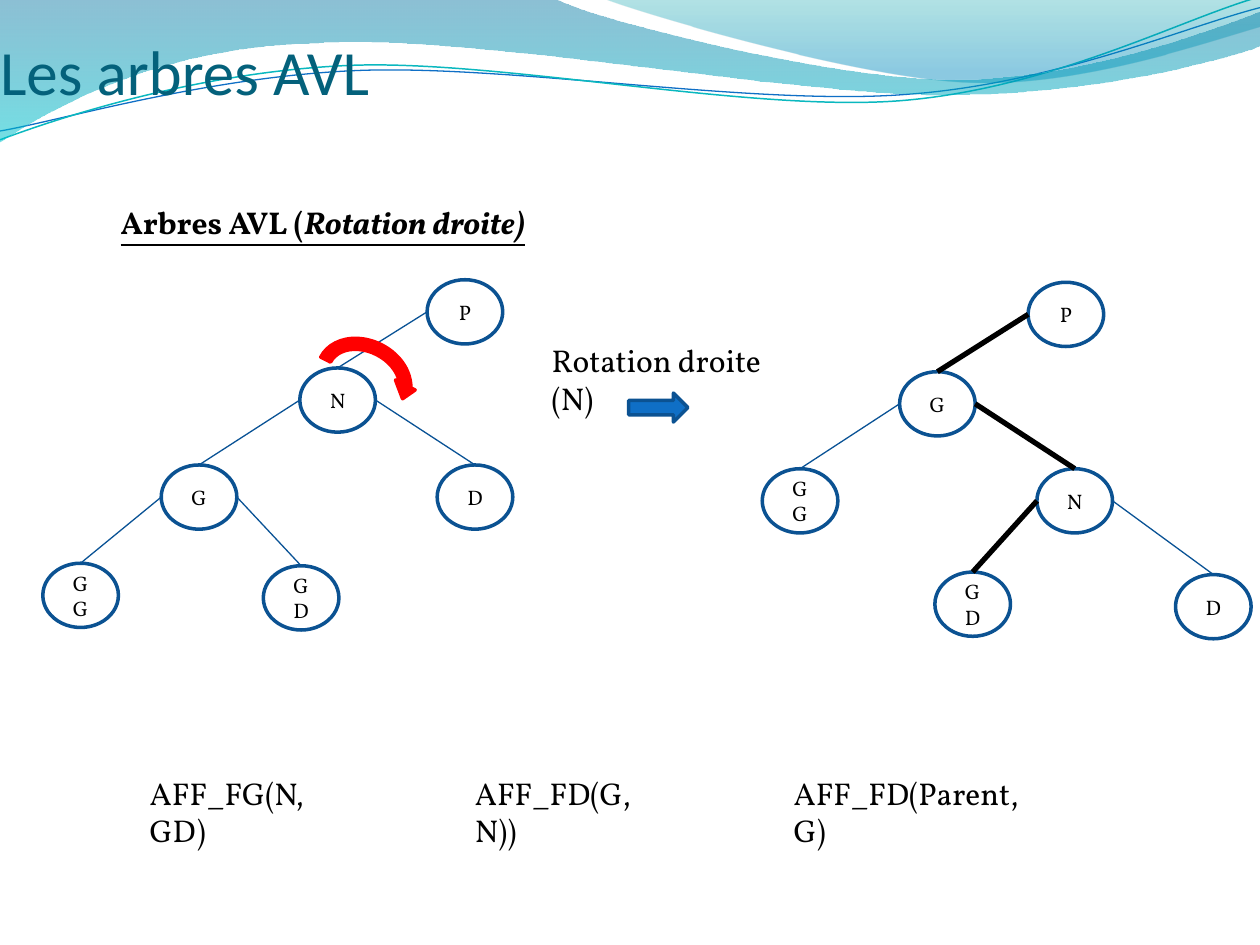
from dataclasses import dataclass
from math import cos, radians, sin

from lxml import etree
from pptx import Presentation
from pptx.dml.color import RGBColor
from pptx.enum.shapes import MSO_CONNECTOR, MSO_SHAPE
from pptx.enum.text import MSO_ANCHOR, PP_ALIGN
from pptx.oxml.ns import qn
from pptx.util import Inches, Pt

STRAIGHT = MSO_CONNECTOR.STRAIGHT
OVAL = MSO_SHAPE.OVAL
CIRCULAR_ARROW = MSO_SHAPE.CIRCULAR_ARROW
RIGHT_ARROW = MSO_SHAPE.RIGHT_ARROW
MIDDLE, BOTTOM = MSO_ANCHOR.MIDDLE, MSO_ANCHOR.BOTTOM
LEFT, CENTER = PP_ALIGN.LEFT, PP_ALIGN.CENTER

Point = tuple[float, float]
Segment = tuple[Point, ...]


@dataclass(frozen=True)
class Theme:
    title_font: str = "Calibri"
    text_font: str = "Vollkorn"
    title_size: int = 36
    text_size: int = 18
    node_size: int = 12
    title: str = "04617B"
    black: str = "000000"
    white: str = "FFFFFF"
    outline: str = "0B5292"
    edge: str = "095295"
    blue: str = "0F6FC6"
    teal: str = "0AB8BF"
    red: str = "FF0000"


@dataclass(frozen=True)
class Stop:
    position: float
    color: str
    opacity: int


@dataclass(frozen=True)
class Node:
    label: str
    left: float
    top: float


@dataclass(frozen=True)
class Edge:
    parent: str
    child: str
    from_right: bool = False
    moved: bool = False


@dataclass(frozen=True)
class Caption:
    text: str
    left: float
    top: float
    width: float


THEME = Theme()
NODE_WIDTH, NODE_HEIGHT = 0.6, 0.51
UNITS = 1000
RIPPLE_TILT = -2.7
RIPPLE_CENTER = (4.99, 0.58)

TREES = [
    (
        [Node("P", 3.39, 2.22), Node("N", 2.38, 2.92), Node("G", 1.28, 3.69),
         Node("D", 3.47, 3.69), Node("GG", 0.34, 4.47), Node("GD", 2.09, 4.49)],
        [Edge("P", "N"), Edge("N", "G"), Edge("N", "D", True),
         Edge("G", "GG"), Edge("G", "GD", True)],
    ),
    (
        [Node("P", 8.16, 2.24), Node("G", 7.14, 2.95), Node("GG", 6.05, 3.72),
         Node("N", 8.23, 3.72), Node("GD", 7.42, 4.54), Node("D", 9.33, 4.56)],
        [Edge("P", "G", moved=True), Edge("G", "GG"), Edge("G", "N", True, True),
         Edge("N", "GD", moved=True), Edge("N", "D", True)],
    ),
]

CAPTIONS = [
    Caption("AFF_FG(N, GD)", 1.09, 6.09, 1.73),
    Caption("AFF_FD(G, N))", 3.67, 6.09, 1.65),
    Caption("AFF_FD(Parent, G)", 6.2, 6.09, 2.08),
    Caption("Rotation droite (N)", 4.28, 2.66, 2.12),
]


def rgb(color: str) -> RGBColor:
    return RGBColor.from_string(color)


def add_outline(slide, start: Point, segments: list[Segment], closed: bool):
    points = [(x * UNITS, y * UNITS) for segment in segments for x, y in segment]
    builder = slide.shapes.build_freeform(start[0] * UNITS, start[1] * UNITS,
                                          scale=Inches(1) / UNITS)
    builder.add_line_segments(points, close=closed)
    shape = builder.convert_to_shape()
    shape.shadow.inherit = False
    steps = iter(list(shape._element.iter(qn("a:lnTo"))))
    for segment in segments:
        group = [next(steps) for _ in segment]
        if len(group) == 3:
            bend = etree.Element(qn("a:cubicBezTo"))
            group[0].addprevious(bend)
            for step in group:
                bend.append(step[0])
                step.getparent().remove(step)
    return shape


def move_to_master(deck, shape) -> None:
    tree = deck.slide_master.shapes._spTree
    first = next(tree.iterchildren(qn("p:sp")))
    first.addprevious(shape._element)


def add_wave(deck, slide, start: Point, segments: list[Segment], stops: list[Stop]) -> None:
    wave = add_outline(slide, start, segments, True)
    wave.line.fill.background()
    wave.fill.gradient()
    wave.fill.gradient_angle = 270
    for target, stop in zip(wave.fill.gradient_stops, stops):
        target.position = stop.position
        target.color.rgb = rgb(stop.color)
    for color, stop in zip(wave._element.spPr.iter(qn("a:srgbClr")), stops):
        etree.SubElement(color, qn("a:alpha"), val=str(stop.opacity * 1000))
    move_to_master(deck, wave)


def level(point: Point) -> Point:
    angle = radians(-RIPPLE_TILT)
    x, y = point[0] - RIPPLE_CENTER[0], point[1] - RIPPLE_CENTER[1]
    return (RIPPLE_CENTER[0] + x * cos(angle) - y * sin(angle),
            RIPPLE_CENTER[1] + x * sin(angle) + y * cos(angle))


def add_ripple(deck, slide, start: Point, segments: list[Segment], color: str,
               width: float) -> None:
    leveled = [tuple(level(point) for point in segment) for segment in segments]
    ripple = add_outline(slide, level(start), leveled, False)
    ripple.rotation = RIPPLE_TILT
    ripple.fill.background()
    ripple.line.color.rgb = rgb(color)
    ripple.line.width = Pt(width)
    move_to_master(deck, ripple)


def add_run(para, text: str, size: int, color: str = THEME.black,
            font: str = THEME.text_font):
    span = para.add_run()
    span.text = text
    span.font.name = font
    span.font.size = Pt(size)
    span.font.color.rgb = rgb(color)
    return span


def add_text_box(slide, left: float, top: float, width: float):
    box = slide.shapes.add_textbox(Inches(left), Inches(top), Inches(width), Inches(0.4))
    box.text_frame.word_wrap = True
    return box.text_frame.paragraphs[0]


def add_figure(slide, kind, left: float, top: float, width: float, height: float,
               fill: str, outline: str):
    figure = slide.shapes.add_shape(kind, Inches(left), Inches(top),
                                    Inches(width), Inches(height))
    figure.shadow.inherit = False
    figure.fill.solid()
    figure.fill.fore_color.rgb = rgb(fill)
    figure.line.color.rgb = rgb(outline)
    figure.line.width = Pt(2)
    return figure


def add_node(slide, node: Node):
    oval = add_figure(slide, OVAL, node.left, node.top, NODE_WIDTH, NODE_HEIGHT,
                      THEME.white, THEME.outline)
    oval.text_frame.vertical_anchor = MIDDLE
    para = oval.text_frame.paragraphs[0]
    para.alignment = CENTER
    add_run(para, node.label, THEME.node_size)
    return oval


def add_edge(slide, edge: Edge, ovals: dict) -> None:
    parent, child = ovals[edge.parent], ovals[edge.child]
    start_x = parent.left + (parent.width if edge.from_right else 0)
    line = slide.shapes.add_connector(STRAIGHT, start_x, parent.top + parent.height // 2,
                                      child.left + child.width // 2, child.top)
    line.end_connect(child, 0)
    line.line.color.rgb = rgb(THEME.black if edge.moved else THEME.edge)
    line.line.width = Pt(3 if edge.moved else 0.75)
    etree.SubElement(line._element.spPr, qn("a:effectLst"))


def add_backdrop(deck, slide) -> None:
    add_wave(deck, slide, (0, 0), [
        ((4.4, -0.01),), ((4.76, 0.17), (6.64, 0.63), (7.58, 0.63)),
        ((8.53, 0.63), (9.58, 0.26), (10, 0.09)), ((10.01, 0.36),),
        ((9.83, 0.44), (8.7, 0.76), (7.46, 0.75)), ((6.22, 0.75), (3.82, 0.28), (2.57, 0.34)),
        ((1.29, 0.36), (0.46, 0.83), (-0.01, 1.13)),
    ], [Stop(0, "0074A1", 45), Stop(1, "00C6CF", 55)])
    add_wave(deck, slide, (4.79, -0.01), [
        ((5.09, 0.11), (6.82, 0.62), (7.69, 0.65)), ((8.56, 0.69), (9.61, 0.32), (10, 0.21)),
        ((10, 0),),
    ], [Stop(0, "00A1A9", 30), Stop(0.8, "008BBF", 45)])
    add_ripple(deck, slide, (0, 1.11), [
        ((0.48, 0.93), (1.58, 0.57), (2.77, 0.52)), ((3.95, 0.47), (5.93, 0.89), (7.13, 0.8)),
        ((8.33, 0.71), (9.38, 0.15), (9.98, -0.02)),
    ], THEME.teal, 0.85)
    add_ripple(deck, slide, (0, 1.04), [
        ((0.47, 0.96), (1.64, 0.61), (2.83, 0.56)), ((4.03, 0.51), (5.97, 0.84), (7.17, 0.75)),
        ((8.36, 0.67), (9.41, 0.21), (10, 0.06)),
    ], THEME.blue, 0.75)


def add_title(slide) -> None:
    title = slide.shapes.title
    title.left, title.top, title.width, title.height = 0, 0, Inches(10), Inches(0.86)
    frame = title.text_frame
    frame.margin_left = frame.margin_right = frame.margin_bottom = 0
    frame.margin_top = Inches(0.05)
    frame.vertical_anchor = BOTTOM
    frame.paragraphs[0].alignment = LEFT
    add_run(frame.paragraphs[0], "Les arbres AVL", THEME.title_size, THEME.title,
            THEME.title_font)
    slide.shapes._spTree.append(title._element)


def main() -> None:
    deck = Presentation()
    deck.slide_width, deck.slide_height = Inches(10), Inches(7.5)
    slide = deck.slides.add_slide(deck.slide_layouts[5])
    add_backdrop(deck, slide)
    heading = add_text_box(slide, 0.86, 1.56, 6.72)
    for text, italic in (("Arbres AVL (", False), ("Rotation droite)", True)):
        span = add_run(heading, text, THEME.text_size)
        span.font.bold = span.font.underline = True
        span.font.italic = italic
    for nodes, edges in TREES:
        ovals = {node.label: add_node(slide, node) for node in nodes}
        for edge in edges:
            add_edge(slide, edge, ovals)
    turn = add_figure(slide, CIRCULAR_ARROW, 2.46, 2.66, 0.86, 0.7, THEME.red, THEME.red)
    turn.rotation = 27
    add_figure(slide, RIGHT_ARROW, 4.99, 3.12, 0.47, 0.23, THEME.blue, THEME.outline)
    for caption in CAPTIONS:
        para = add_text_box(slide, caption.left, caption.top, caption.width)
        add_run(para, caption.text, THEME.text_size)
    add_title(slide)
    deck.save("out.pptx")


if __name__ == "__main__":
    main()
